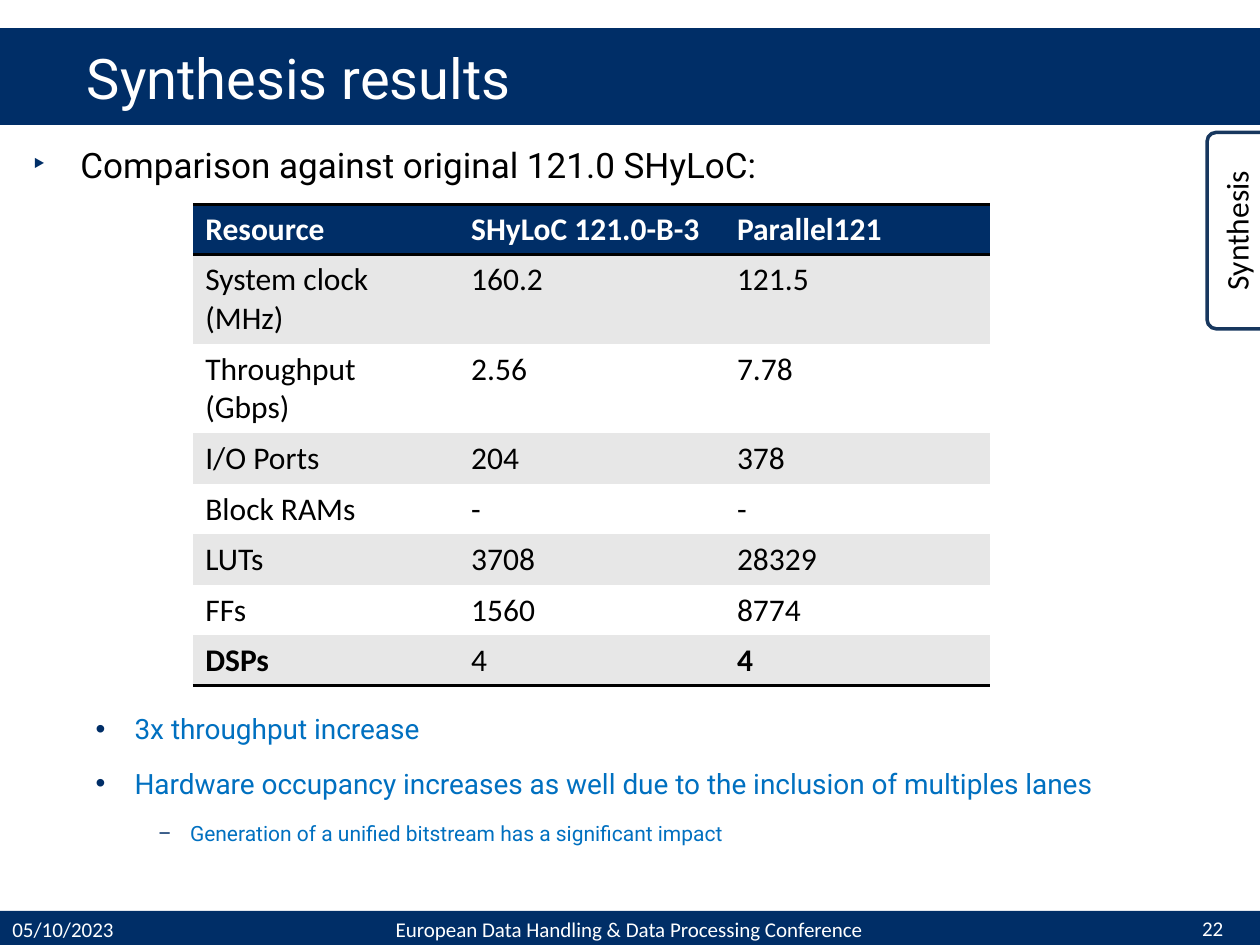
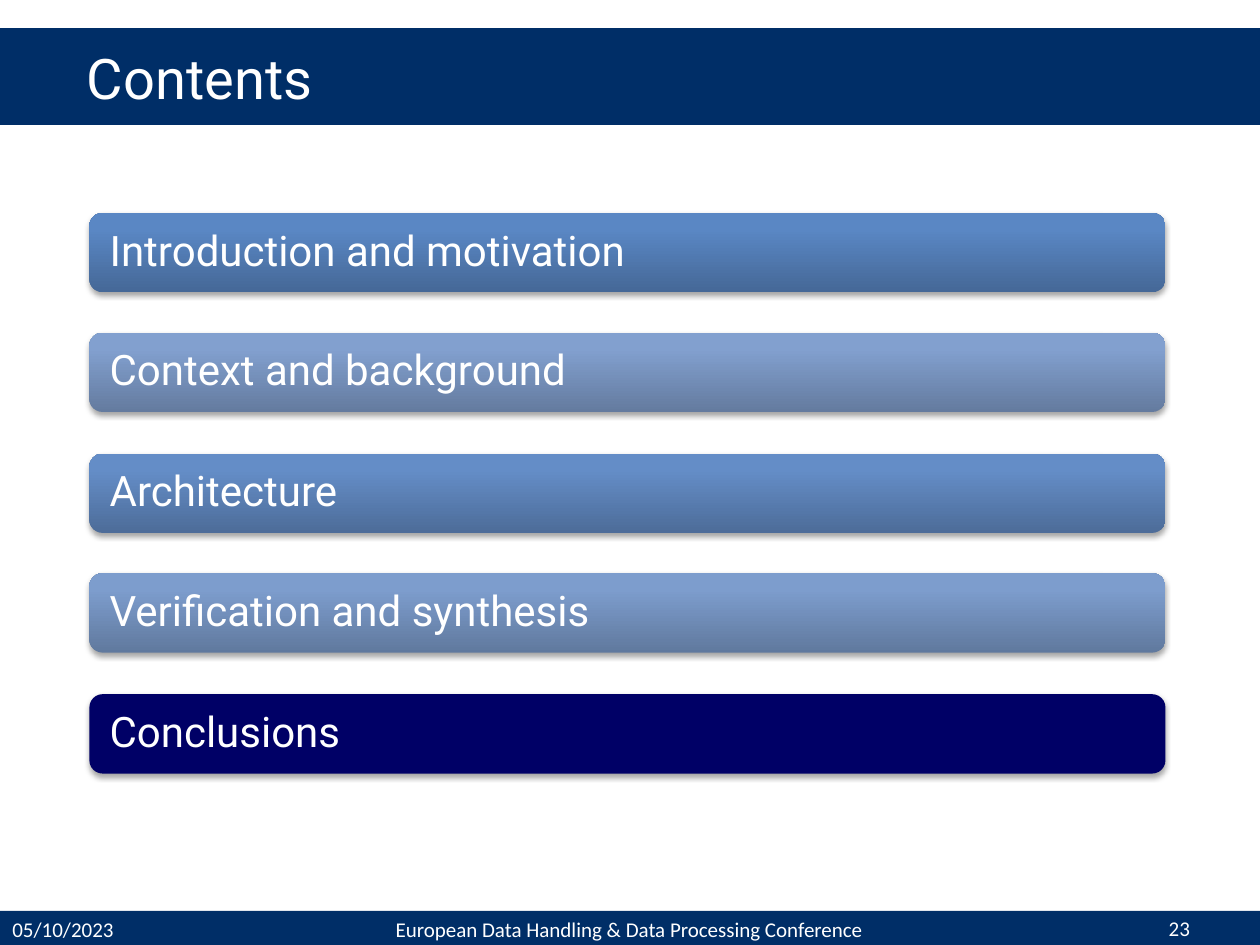
import copy

import lxml.etree
import pptx
import pptx.dml.color
import pptx.enum.shapes
import pptx.enum.text
import pptx.oxml.ns
import pptx.util

PX = 9144  # EMU in one px, 100 px to the inch
COLORS = {
    "navy": "002E67", "white": "FFFFFF", "black": "000000", "gray": "E7E7E7",
    "blue": "0070C0", "edge": "17375E", "deep": "000066",
}
HEAD, BODY = "Roboto", "Calibri"
PLAIN = "{2D5ABB26-0587-4C30-8999-92F81FD0307C}"  # table style without grid
SHAPE = pptx.enum.shapes.MSO_SHAPE
ALIGN = pptx.enum.text.PP_ALIGN
MID = pptx.enum.text.MSO_ANCHOR.MIDDLE
qn = pptx.oxml.ns.qn


def rgb(name):
    return pptx.dml.color.RGBColor.from_string(COLORS.get(name, name))


def px(*nums):
    return [pptx.util.Emu(num * PX) for num in nums]


def add(parent, tag, **attrs):
    return lxml.etree.SubElement(parent, qn(tag), **attrs)


class Deck:
    def __init__(self):
        self.prs = pptx.Presentation()
        self.prs.slide_width, self.prs.slide_height = px(1000, 750)

    def style(self, para, size, color, font=BODY, bold=False, align=ALIGN.LEFT):
        para.alignment = align
        for run in para.runs:
            run.font.size = pptx.util.Pt(size)
            run.font.name = font
            run.font.bold = bold
            run.font.color.rgb = rgb(color)

    def page(self, title, num, num_box):
        """Start a slide with its bands, title and footer."""
        self.slide = self.prs.slides.add_slide(self.prs.slide_layouts[5])
        self.shapes = self.slide.shapes
        self.shape(SHAPE.RECTANGLE, (0, 723, 1000, 29), "navy")
        self.shape(SHAPE.RECTANGLE, (0, 24, 1000, 74), "navy", "navy")
        head = self.shapes.title
        self.shapes.element.append(head.element)  # bring above the band
        head.left, head.top, head.width, head.height = px(59, 24, 820, 74)
        frame = head.text_frame
        frame.text = title
        frame.auto_size = pptx.enum.text.MSO_AUTO_SIZE.NONE
        frame.vertical_anchor = MID
        self.style(frame.paragraphs[0], 32, "white", HEAD)
        self.label("05/10/2023", (0, 724, 134, 27), ALIGN.LEFT)
        self.label("European Data Handling & Data Processing Conference",
                   (263, 723, 473, 28))
        self.label(str(num), num_box)

    def shape(self, kind, box, fill=None, line=None):
        shape = self.shapes.add_shape(kind, *px(*box))
        shape.shadow.inherit = False
        if fill:
            shape.fill.solid()
            shape.fill.fore_color.rgb = rgb(fill)
        if line:
            shape.line.color.rgb = rgb(line)
            shape.line.width = pptx.util.Pt(2)
        else:
            shape.line.fill.background()
        return shape

    def label(self, text, box, align=ALIGN.CENTER):
        frame = self.shapes.add_textbox(*px(*box)).text_frame
        frame.word_wrap = True
        frame.vertical_anchor = MID
        frame.text = text
        self.style(frame.paragraphs[0], 12, "white", align=align)

    def bullets(self, box, items):
        """Each item: text, level, size, colour."""
        marks = [("‣", 38, 38), ("•", 81, 31), ("−", 125, 25)]
        frame = self.shapes.add_textbox(*px(*box)).text_frame
        frame.word_wrap = True
        for i, (text, level, size, color) in enumerate(items):
            para = frame.add_paragraph() if i else frame.paragraphs[0]
            para.text = text
            para.level = level
            mark, left, hang = marks[level]
            props = para._p.get_or_add_pPr()
            props.set("marL", str(left * PX))
            props.set("indent", str(-hang * PX))
            add(add(props, "a:buClr"), "a:srgbClr", val=COLORS["navy"])
            add(props, "a:buFont", typeface="Arial")
            add(props, "a:buChar", char=mark)
            para.space_after = pptx.util.Pt(12)
            self.style(para, size, color, HEAD)

    def tab(self, text, box):
        shape = self.shape(SHAPE.ROUND_2_SAME_RECTANGLE, box, "white", "edge")
        shape.rotation = 270
        shape.text_frame.text = text
        shape.text_frame.vertical_anchor = MID
        self.style(shape.text_frame.paragraphs[0], 18, "black", align=ALIGN.CENTER)

    def table(self, left, top, width, rows, tall, bold):
        """tall: rows with two lines; bold: (row, column) of stressed cells."""
        cols = len(rows[0])
        highs = [71 if r in tall else 40 for r in range(len(rows))]
        table = self.shapes.add_table(
            len(rows), cols, *px(left, top, width * cols, sum(highs))).table
        table._tbl.tblPr.find(qn("a:tableStyleId")).text = PLAIN
        for col in table.columns:
            col.width = px(width)[0]
        for r, row in enumerate(rows):
            table.rows[r].height = px(highs[r])[0]
            sides = {0: ["a:lnT", "a:lnB"], len(rows) - 1: ["a:lnB"]}.get(r, [])
            fill = "navy" if r == 0 else "gray" if r % 2 else "white"
            for c, text in enumerate(row):
                cell = table.cell(r, c)
                cell.text = text
                self.style(cell.text_frame.paragraphs[0], 18,
                           "black" if r else "white",
                           bold=r == 0 or (r, c) in bold)
                for side in sides:
                    line = add(cell._tc.get_or_add_tcPr(), side, w="25400")
                    add(add(line, "a:solidFill"), "a:srgbClr", val=COLORS["black"])
                cell.fill.solid()
                cell.fill.fore_color.rgb = rgb(fill)

    def bar(self, text, box, tones):
        """One tone gives a flat bar; three give a gradient from the bottom up."""
        flat = len(tones) == 1
        shape = self.shape(SHAPE.ROUNDED_RECTANGLE, box, tones[0] if flat else None)
        props = shape.element.spPr
        if not flat:
            shape.fill.gradient()
            shape.fill.gradient_angle = 90
            stops = props.find(".//" + qn("a:gsLst"))
            stops.append(copy.deepcopy(stops[0]))
            for stop, place, tone in zip(shape.fill.gradient_stops, (0, 0.8, 1), tones):
                stop.position = place
                stop.color.rgb = rgb(tone)
        shade = add(props.find(qn("a:effectLst")), "a:outerShdw", blurRad="40000",
                    dist="23000", dir="5400000", rotWithShape="0")
        tint = add(shade, "a:srgbClr", val=COLORS["black"])
        add(tint, "a:alpha", val="35000")
        frame = shape.text_frame
        frame.margin_left = px(13)[0]
        frame.vertical_anchor = MID
        frame.text = text
        frame.paragraphs[0].line_spacing = 0.9
        self.style(frame.paragraphs[0], 24, "white", HEAD)


def results(deck):
    deck.page("Synthesis results", 22, (925, 724, 75, 26))
    deck.bullets((16, 109, 909, 45),
                 [("Comparison against original 121.0 SHyLoC:", 0, 20, "black")])
    deck.bullets((16, 560, 909, 130), [
        ("3x throughput increase", 1, 16, "blue"),
        ("Hardware occupancy increases as well due to the inclusion of multiples lanes",
         1, 16, "blue"),
        ("Generation of a unified bitstream has a significant impact", 2, 12, "blue"),
    ])
    deck.tab("Synthesis", (902, 161, 156, 44))
    deck.table(153, 162, 211, [
        ("Resource", "SHyLoC 121.0-B-3", "Parallel121"),
        ("System clock (MHz)", "160.2", "121.5"),
        ("Throughput (Gbps)", "2.56", "7.78"),
        ("I/O Ports", "204", "378"),
        ("Block RAMs", "-", "-"),
        ("LUTs", "3708", "28329"),
        ("FFs", "1560", "8774"),
        ("DSPs", "4", "4"),
    ], tall={1, 2}, bold={(7, 0), (7, 2)})


def contents(deck):
    deck.page("Contents", 23, (875, 724, 122, 26))
    parts = [
        ("Introduction and motivation", ("456897", "5A87C4", "5887C7")),
        ("Context and background", ("647B9F", "82A0CF", "81A0D1")),
        ("Architecture", ("4D6C99", "648DC7", "638DCA")),
        ("Verification and synthesis", ("60799E", "7D9DCD", "7C9DD0")),
        ("Conclusions", ("deep",)),
    ]
    for i, (text, tones) in enumerate(parts):
        deck.bar(text, (71, 169 + i * 191 // 2, 854, 63), tones)


def main():
    deck = Deck()
    results(deck)
    contents(deck)
    deck.prs.save("out.pptx")


if __name__ == "__main__":
    main()
